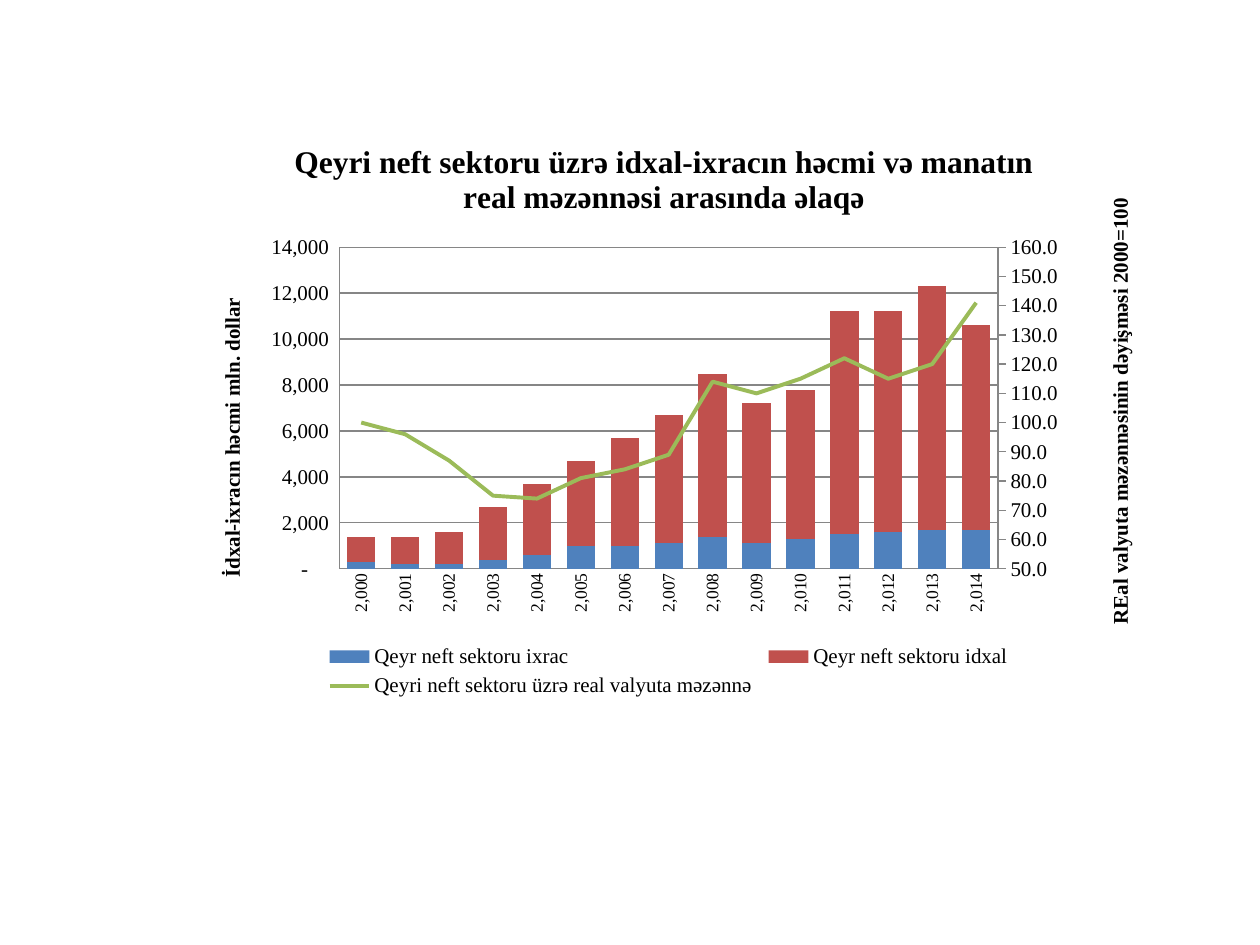
from pptx import Presentation
from pptx.chart.axis import ValueAxis
from pptx.chart.data import CategoryChartData
from pptx.dml.color import RGBColor
from pptx.enum.chart import (XL_CHART_TYPE, XL_LEGEND_POSITION,
                             XL_MARKER_STYLE, XL_TICK_MARK)
from pptx.oxml import parse_xml
from pptx.oxml.ns import nsdecls, qn
from pptx.util import Cm, Pt

# Content
TITLE = "Qeyri neft sektoru üzrə idxal-ixracın həcmi və manatın real məzənnəsi arasında əlaqə"
LEFT = "İdxal-ixracın həcmi mln. dollar"
RIGHT = "REal valyuta məzənnəsinin dəyişməsi 2000=100"
YEARS = range(2000, 2015)
SERIES = [
    ("Qeyr neft sektoru ixrac", "4F81BD",
     [300, 200, 200, 400, 600, 1000, 1000, 1100, 1400, 1100, 1300, 1500, 1600, 1700, 1700]),
    ("Qeyr neft sektoru idxal", "C0504D",
     [1100, 1200, 1400, 2300, 3100, 3700, 4700, 5600, 7100, 6100, 6500, 9700, 9600, 10600, 8900]),
    ("Qeyri neft sektoru üzrə real valyuta məzənnə", "9BBB59",
     [100, 96, 87, 75, 74, 81, 84, 89, 114, 110, 115, 122, 115, 120, 141]),
]
FONT, BLACK, GREY = "Times New Roman", "000000", "868686"
MONEY = '_(* #,##0_);_(* \\(#,##0\\);_(* "-"??_);_('


def color(code):
    return RGBColor.from_string(code)


def style(font, size, bold=False):
    font.name, font.size, font.bold = FONT, Pt(size), bold
    font.color.rgb = color(BLACK)


def stroke(line, code=GREY, width=0.75):
    line.color.rgb = color(code)
    line.width = Pt(width)


def place(part, after, **spots):
    """Set a manual layout, as fractions of the chart, behind a child."""
    old = part.find(qn("c:layout"))
    if old is not None:
        part.remove(old)
    inner = '<c:layoutTarget val="inner"/>' if after is None else ""
    modes = "".join(f'<c:{k}Mode val="edge"/>' for k in "xy")
    sizes = "".join(f'<c:{k} val="{v}"/>' for k, v in spots.items())
    layout = parse_xml(f'<c:layout {nsdecls("c")}><c:manualLayout>{inner}{modes}{sizes}'
                       '</c:manualLayout></c:layout>')
    if after is None:
        part.insert(0, layout)
    else:
        part.find(qn(after)).addnext(layout)


def label(owner, text, size):
    frame = owner.text_frame
    frame.text = text
    style(frame.paragraphs[0].runs[0].font, size, True)
    return frame


def name_axis(axis, text, x, y):
    frame = label(axis.axis_title, text, 12)
    body = frame._txBody.find(qn("a:bodyPr"))
    body.set("rot", "-5400000")
    body.set("vert", "horz")
    place(axis.axis_title._element, "c:tx", x=x, y=y)


def format_axis(axis, size, code, tick):
    style(axis.tick_labels.font, size)
    axis.tick_labels.number_format = code
    axis.tick_labels.number_format_is_linked = False
    axis.major_tick_mark, axis.minor_tick_mark = tick, XL_TICK_MARK.NONE
    stroke(axis.format.line)


def make_axis(kind, own, other, side, hidden, cross):
    return parse_xml(
        f'<c:{kind} {nsdecls("c")}><c:axId val="{own}"/>'
        '<c:scaling><c:orientation val="minMax"/></c:scaling>'
        f'<c:delete val="{hidden}"/><c:axPos val="{side}"/><c:tickLblPos val="nextTo"/>'
        f'<c:crossAx val="{other}"/><c:crosses val="{cross}"/></c:{kind}>')


def split_line(chart, left):
    """Move the last series to a line plot on a second axis."""
    ser = chart.plots[0].series[-1]._element
    flag = ser.find(qn("c:invertIfNegative"))
    if flag is not None:
        ser.remove(flag)
    plot = parse_xml(f'<c:lineChart {nsdecls("c")}><c:grouping val="standard"/>'
                     '<c:varyColors val="0"/><c:marker val="1"/>'
                     '<c:axId val="501"/><c:axId val="502"/></c:lineChart>')
    plot.find(qn("c:varyColors")).addnext(ser)
    chart.plots[0]._element.addnext(plot)
    right = make_axis("valAx", 502, 501, "r", 0, "max")
    left._element.addnext(right)
    right.addnext(make_axis("catAx", 501, 502, "b", 1, "autoZero"))
    return ValueAxis(right)


# Slide and chart
deck = Presentation()
deck.slide_width, deck.slide_height = Cm(25.4), Cm(19.05)
slide = deck.slides.add_slide(deck.slide_layouts[6])
data = CategoryChartData(number_format="General")
data.categories = YEARS
data.categories.number_format = "#,##0"
for name, _, vals in SERIES:
    data.add_series(name, vals)
chart = slide.shapes.add_chart(XL_CHART_TYPE.COLUMN_STACKED, Cm(3.76), Cm(2.39),
                               Cm(19.25), Cm(11.79), data).chart
style(chart.font, 10)
label(chart.chart_title, TITLE, 18)

# Plots; the left axis is taken before a second value axis exists
years, left = chart.category_axis, chart.value_axis
right = split_line(chart, left)
bars, line = chart.plots
bars.gap_width, bars.overlap, bars.vary_by_categories = 55, 100, False
for ser, (_, code, _) in zip(bars.series, SERIES):
    ser.format.fill.solid()
    ser.format.fill.fore_color.rgb = color(code)
rate = line.series[0]
rate.smooth = False
rate.marker.style = XL_MARKER_STYLE.NONE
stroke(rate.format.line, SERIES[-1][1], 2.25)
place(bars._element.getparent(), None, x=0.16, y=0.22, w=0.69, h=0.55)

# Axes
format_axis(years, 10, "#,##0", XL_TICK_MARK.NONE)
years._element.find(qn("c:txPr")).find(qn("a:bodyPr")).set("rot", "-5400000")
format_axis(left, 12, MONEY, XL_TICK_MARK.NONE)
left.has_major_gridlines = True
stroke(left.major_gridlines.format.line)
name_axis(left, LEFT, 0.03, 0.3)
format_axis(right, 12, "0.0", XL_TICK_MARK.OUTSIDE)
right.has_major_gridlines = False
right.minimum_scale, right.maximum_scale, right.major_unit = 50, 160, 10
name_axis(right, RIGHT, 0.96, 0.13)

# Legend
chart.has_legend = True
legend = chart.legend
legend.position, legend.include_in_layout = XL_LEGEND_POSITION.BOTTOM, False
style(legend.font, 12)
place(legend._element, "c:legendPos", x=0.14, y=0.89, w=0.73, h=0.11)

deck.save("out.pptx")
